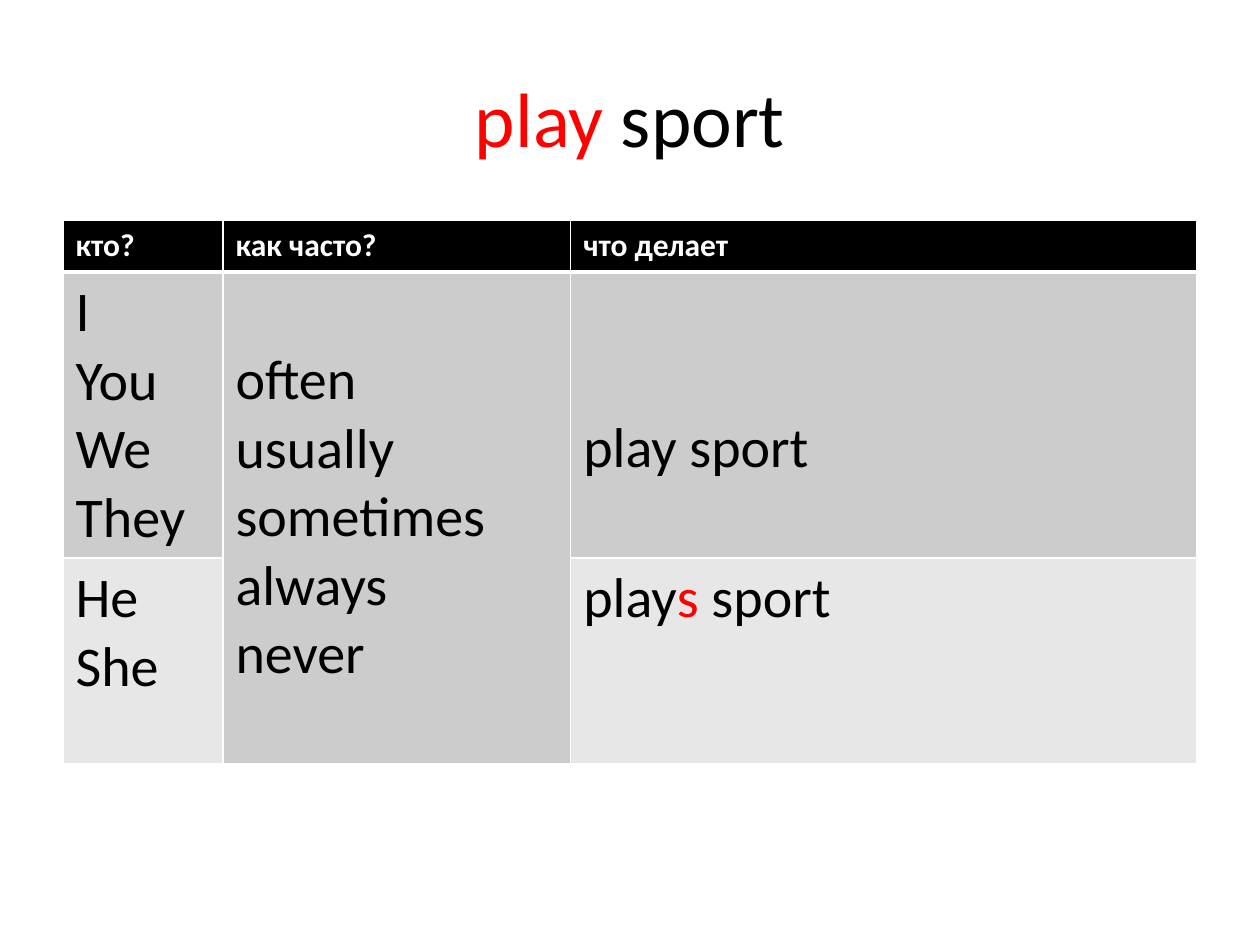
import pptx
import pptx.util
import pptx.dml.color
import pptx.enum.text
import pptx.oxml
import pptx.oxml.ns

Inches = pptx.util.Inches
RGBColor = pptx.dml.color.RGBColor

BLACK = RGBColor(0, 0, 0)
WHITE = RGBColor(255, 255, 255)
RED = RGBColor(255, 0, 0)
GRAY = RGBColor(0xCC, 0xCC, 0xCC)
PALE = RGBColor(0xE7, 0xE7, 0xE7)

FONT = "Calibri"
LINE = 0.54  # height of one 32 pt line, in inches
COLS = [1.27, 2.76, 4.97]
ROWS = [0.41, 2.27, 1.63]
HEADS = ["кто?", "как часто?", "что делает"]


def write(frame, lines, size=32, color=BLACK, bold=False, align=None):
    """Fill a frame; a line is a string or a list of (text, color) runs."""
    for i, line in enumerate(lines):
        para = frame.paragraphs[0] if i == 0 else frame.add_paragraph()
        para.alignment = align
        runs = [(line, color)] if isinstance(line, str) else line
        for text, tint in runs:
            run = para.add_run()
            run.text = text
            run.font.name = FONT
            run.font.size = pptx.util.Pt(size)
            run.font.bold = bold
            run.font.color.rgb = tint


def edge(cell, base=1):
    """Draw white borders, with the bottom one base points wide."""
    props = cell._tc.get_or_add_tcPr()
    names = ["lnL", "lnR", "lnT", "lnB"]
    for i, (name, width) in enumerate(zip(names, [1, 1, 1, base])):
        line = pptx.oxml.parse_xml(
            f'<a:{name} {pptx.oxml.ns.nsdecls("a")} w="{pptx.util.Pt(width)}">'
            f'<a:solidFill><a:srgbClr val="{WHITE}"/></a:solidFill></a:{name}>')
        props.insert(i, line)


def paint(cell, color, base=1):
    cell.fill.solid()
    cell.fill.fore_color.rgb = color
    edge(cell, base)


def add_title(slide, left, top, width, height):
    box = slide.shapes.add_textbox(left, top, width, height)
    frame = box.text_frame
    frame.word_wrap = True
    frame.vertical_anchor = pptx.enum.text.MSO_ANCHOR.MIDDLE
    write(frame, [[("play", RED), (" sport", BLACK)]], size=44,
          align=pptx.enum.text.PP_ALIGN.CENTER)


def add_grid(slide, left, top, width, height):
    shape = slide.shapes.add_table(len(ROWS), len(COLS),
                                   left, top, width, height)
    table = shape.table
    for col, part in zip(table.columns, COLS):
        col.width = int(width * part / sum(COLS))
    for row, part in zip(table.rows, ROWS):
        row.height = int(height * part / sum(ROWS))

    for r, color in enumerate([BLACK, GRAY, PALE]):
        for c in range(len(COLS)):
            paint(table.cell(r, c), color, base=3 if r == 0 else 1)
    table.cell(1, 1).merge(table.cell(2, 1))

    for c, head in enumerate(HEADS):
        write(table.cell(0, c).text_frame, [head],
              size=18, color=WHITE, bold=True)

    # row, column, lines left free above the text, text
    body = [
        (1, 0, 0, ["I", "You", "We", "They"]),
        (1, 1, 1, ["often", "usually", "sometimes", "always", "never"]),
        (1, 2, 2, ["play sport"]),
        (2, 0, 0, ["He", "She"]),
        (2, 2, 0, [[("play", BLACK), ("s ", RED), ("sport", BLACK)]]),
    ]
    for r, c, skip, lines in body:
        cell = table.cell(r, c)
        cell.margin_top = Inches(0.05 + skip * LINE)
        write(cell.text_frame, lines)


def main():
    deck = pptx.Presentation()
    deck.slide_width = Inches(10)
    deck.slide_height = Inches(7.5)
    slide = deck.slides.add_slide(deck.slide_layouts[6])
    add_title(slide, Inches(0.5), Inches(0.3), Inches(9), Inches(1.25))
    add_grid(slide, Inches(0.5), Inches(1.75), Inches(9), Inches(sum(ROWS)))
    deck.save("out.pptx")


if __name__ == "__main__":
    main()
